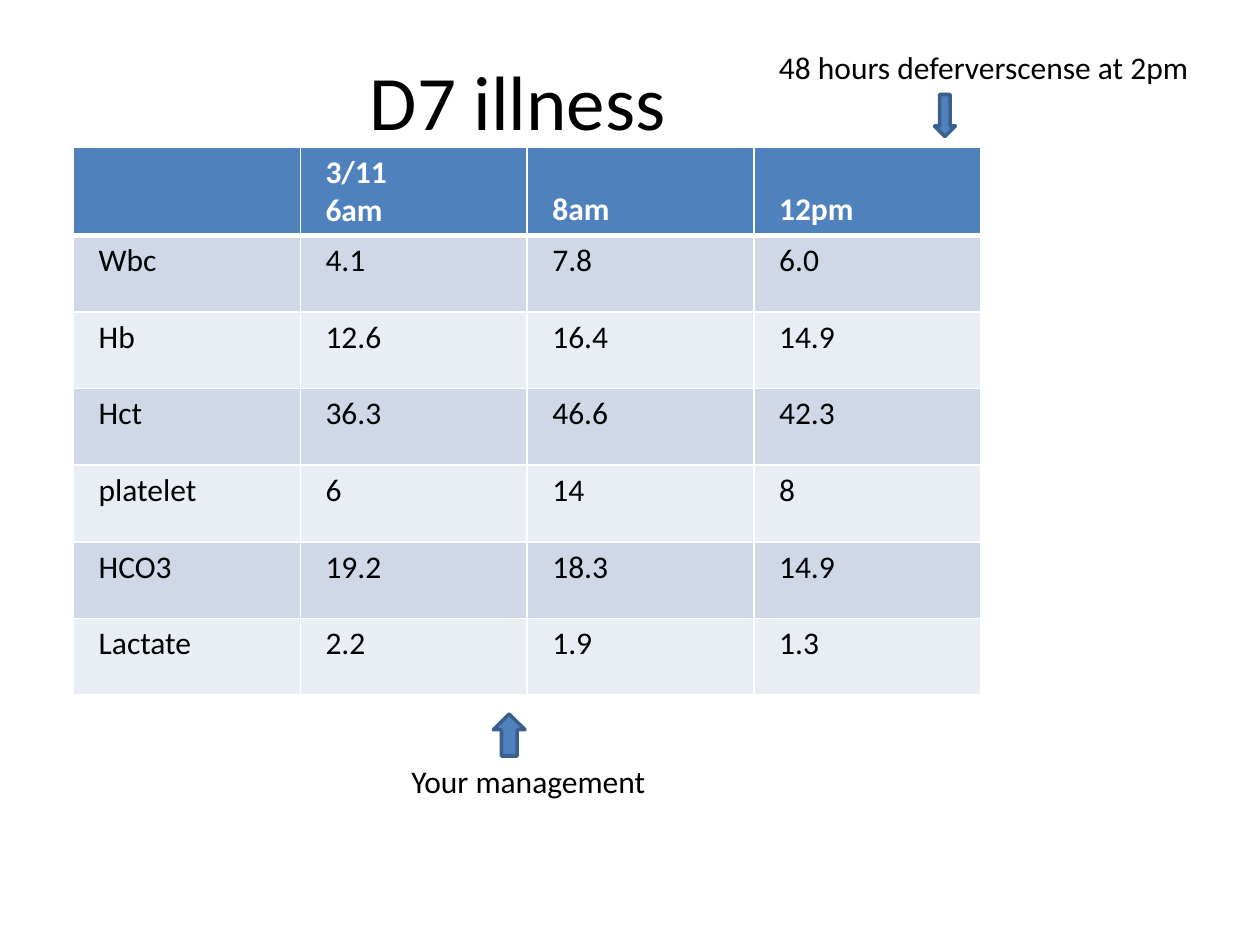
import pptx
import pptx.dml.color
import pptx.enum.shapes
import pptx.enum.text
import pptx.oxml
import pptx.oxml.ns
import pptx.util

BLACK = pptx.dml.color.RGBColor(0x00, 0x00, 0x00)
WHITE = pptx.dml.color.RGBColor(0xFF, 0xFF, 0xFF)
BLUE = pptx.dml.color.RGBColor(0x4F, 0x81, 0xBD)
DARK_BLUE = pptx.dml.color.RGBColor(0x3A, 0x5F, 0x8C)
BANDS = [pptx.dml.color.RGBColor(0xE9, 0xED, 0xF4),
         pptx.dml.color.RGBColor(0xD0, 0xD8, 0xE8)]

deck = pptx.Presentation()
deck.slide_width = pptx.util.Inches(10)
deck.slide_height = pptx.util.Inches(7.5)
page = deck.slides.add_slide(deck.slide_layouts[6])
UNIT = deck.slide_width / 120  # the page is a grid of 120 columns by 90 rows


def grid(*counts):
    return [pptx.util.Emu(round(count * UNIT)) for count in counts]


def style_text(frame, size, color, bold=False):
    for para in frame.paragraphs:
        para.font.size = pptx.util.Pt(size)
        for span in para.runs:
            span.font.name = "Calibri"
            span.font.size = pptx.util.Pt(size)
            span.font.color.rgb = color
            span.font.bold = bold


# Title, moved right of the box's centre by a wide left margin
title = page.shapes.add_textbox(*grid(6, 2, 77, 15))
title.text_frame.word_wrap = True
title.text_frame.margin_left = pptx.util.Inches(0.9)
title.text_frame.vertical_anchor = pptx.enum.text.MSO_ANCHOR.MIDDLE
title.text_frame.text = "D7 illness"
title.text_frame.paragraphs[0].alignment = pptx.enum.text.PP_ALIGN.CENTER
style_text(title.text_frame, 44, BLACK)

# Table of blood results
results = [
    ["", "3/11\n6am", "8am", "12pm"],
    ["Wbc", "4.1", "7.8", "6.0"],
    ["Hb", "12.6", "16.4", "14.9"],
    ["Hct", "36.3", "46.6", "42.3"],
    ["platelet", "6", "14", "8"],
    ["HCO3", "19.2", "18.3", "14.9"],
    ["Lactate", "2.2", "1.9", "1.3"],
]
table = page.shapes.add_table(len(results), 4, *grid(7, 14, 86.4, 52.1)).table
for row_index, values in enumerate(results):
    header = row_index == 0
    table.rows[row_index].height = grid(8.3 if header else 7.3)[0]
    for column_index, value in enumerate(values):
        cell = table.cell(row_index, column_index)
        cell.text_frame.text = value
        cell.margin_left = cell.margin_right = pptx.util.Inches(0.2)
        if header:
            cell.vertical_anchor = pptx.enum.text.MSO_ANCHOR.BOTTOM
        style_text(cell.text_frame, 18, WHITE if header else BLACK, header)

        # White borders, thicker between the header and the first row
        for side in "LRTB":
            thick = (row_index, side) in [(0, "B"), (1, "T")]
            width = pptx.util.Pt(3 if thick else 1)
            cell._tc.get_or_add_tcPr().append(pptx.oxml.parse_xml(
                f'<a:ln{side} {pptx.oxml.ns.nsdecls("a")} w="{width}">'
                f'<a:solidFill><a:srgbClr val="{WHITE}"/></a:solidFill>'
                f'</a:ln{side}>'))
        cell.fill.solid()
        cell.fill.fore_color.rgb = BLUE if header else BANDS[row_index % 2]

# Notes above and below the table
notes = [
    ("48 hours deferverscense at 2pm", (73, 4, 44, 4.8)),
    ("Your management", (38, 72, 25, 4.8)),
]
for words, place in notes:
    box = page.shapes.add_textbox(*grid(*place))
    box.text_frame.word_wrap = True
    box.text_frame.text = words
    style_text(box.text_frame, 18, BLACK)

# Arrows from the notes to the table
arrows = [
    (pptx.enum.shapes.MSO_SHAPE.DOWN_ARROW, (89, 9, 2, 4)),
    (pptx.enum.shapes.MSO_SHAPE.UP_ARROW, (47, 68, 3, 4)),
]
for kind, place in arrows:
    arrow = page.shapes.add_shape(kind, *grid(*place))
    arrow.shadow.inherit = False
    arrow.fill.solid()
    arrow.fill.fore_color.rgb = BLUE
    arrow.line.color.rgb = DARK_BLUE
    arrow.line.width = pptx.util.Pt(2)

deck.save("out.pptx")
